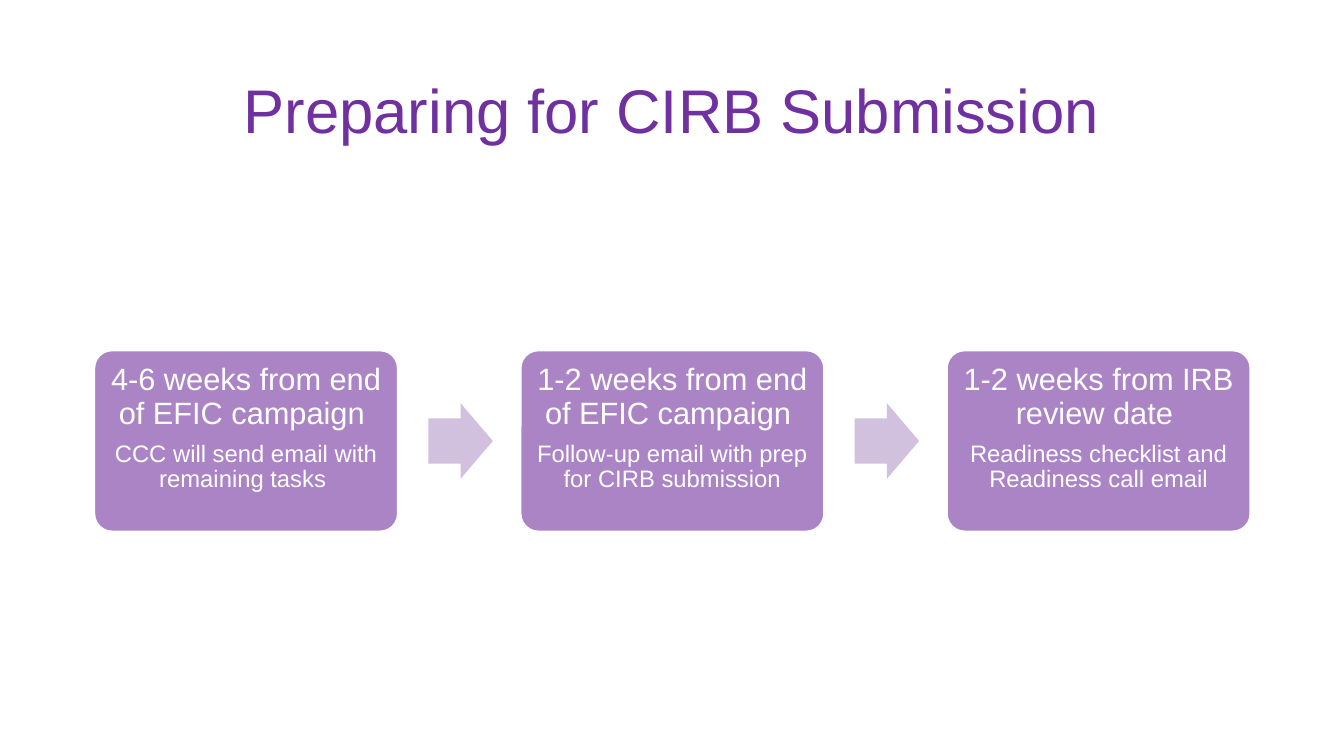
from dataclasses import dataclass

from pptx import Presentation
from pptx.dml.color import RGBColor
from pptx.enum.shapes import MSO_SHAPE as Preset
from pptx.enum.text import MSO_ANCHOR as Anchor, PP_ALIGN as Align
from pptx.util import Pt

COLORS = {
    "title": "7030A0",
    "box": "AB84C6",
    "arrow": "D1C1DF",
    "white": "FFFFFF",
}
FONT = "Arial"
STEP_LEFT, STEP_PITCH = 67, 304.5
STEP_TOP, STEP_WIDTH, STEP_HEIGHT = 250, 217.5, 130
ARROW_OFFSET, ARROW_WIDTH, ARROW_HEIGHT = 239, 46, 54


@dataclass(frozen=True)
class Step:
    timing: str
    task: str


STEPS = [
    Step("4-6 weeks from end of EFIC campaign ", "CCC will send email with remaining tasks "),
    Step("1-2 weeks from end of EFIC campaign ", "Follow-up email with prep for CIRB submission"),
    Step("1-2 weeks from IRB review date ", "Readiness checklist and Readiness call email"),
]


def color(name: str) -> RGBColor:
    return RGBColor.from_string(COLORS[name])


def write(para, text: str, size: float, color_name: str) -> None:
    para.text = text
    para.alignment = Align.CENTER
    para.line_spacing = 0.9
    font = para.runs[0].font
    font.name = FONT
    font.size = Pt(size)
    font.color.rgb = color(color_name)


def add_title(page, text: str) -> None:
    box = page.shapes.add_textbox(Pt(66), Pt(28.8), Pt(828), Pt(104.4))
    frame = box.text_frame
    frame.word_wrap = True
    frame.vertical_anchor = Anchor.MIDDLE
    write(frame.paragraphs[0], text, 44, "title")


def add_step(page, step: Step, left: float) -> None:
    box = page.shapes.add_shape(
        Preset.ROUNDED_RECTANGLE, Pt(left), Pt(STEP_TOP), Pt(STEP_WIDTH), Pt(STEP_HEIGHT)
    )
    box.adjustments[0] = 0.1
    box.shadow.inherit = False
    box.fill.solid()
    box.fill.fore_color.rgb = color("box")
    box.line.color.rgb = color("white")
    box.line.width = Pt(2)
    frame = box.text_frame
    frame.word_wrap = True
    frame.vertical_anchor = Anchor.TOP
    frame.margin_left = frame.margin_right = Pt(6.5)
    frame.margin_top = frame.margin_bottom = Pt(6.5)
    write(frame.paragraphs[0], step.timing, 22, "white")
    task = frame.add_paragraph()
    write(task, step.task, 17, "white")
    task.space_before = Pt(7.7)


def add_arrow(page, left: float) -> None:
    top = STEP_TOP + (STEP_HEIGHT - ARROW_HEIGHT) / 2
    arrow = page.shapes.add_shape(
        Preset.RIGHT_ARROW, Pt(left), Pt(top), Pt(ARROW_WIDTH), Pt(ARROW_HEIGHT)
    )
    arrow.adjustments[0] = 0.6
    arrow.adjustments[1] = 0.5
    arrow.shadow.inherit = False
    arrow.fill.solid()
    arrow.fill.fore_color.rgb = color("arrow")
    arrow.line.fill.background()


def main() -> None:
    deck = Presentation()
    deck.slide_width, deck.slide_height = Pt(960), Pt(540)
    page = deck.slides.add_slide(deck.slide_layouts[6])
    add_title(page, "Preparing for CIRB Submission")
    for index, step in enumerate(STEPS):
        left = STEP_LEFT + index * STEP_PITCH
        add_step(page, step, left)
        if index < len(STEPS) - 1:
            add_arrow(page, left + ARROW_OFFSET)
    deck.save("out.pptx")


if __name__ == "__main__":
    main()
